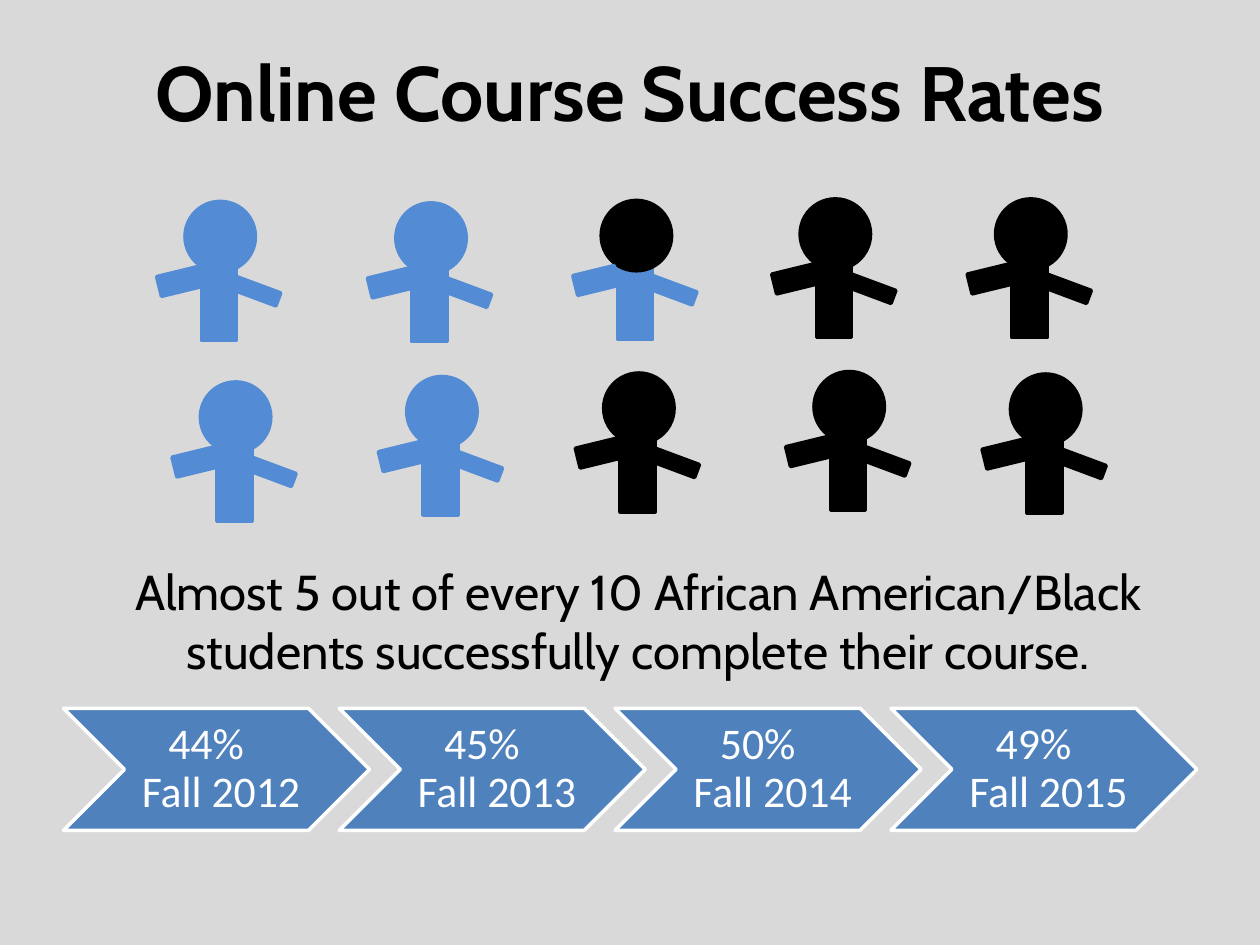
"""Build the slide on online course success rates."""
import pptx
import pptx.dml.color
import pptx.enum.shapes
import pptx.enum.text
import pptx.util

Cm = pptx.util.Cm
Pt = pptx.util.Pt
RGBColor = pptx.dml.color.RGBColor
Shape = pptx.enum.shapes.MSO_SHAPE

BACKGROUND = RGBColor(0xD9, 0xD9, 0xD9)
BLACK = RGBColor(0x00, 0x00, 0x00)
WHITE = RGBColor(0xFF, 0xFF, 0xFF)
PERSON_BLUE = RGBColor(0x53, 0x8C, 0xD5)
CHEVRON_BLUE = RGBColor(0x4F, 0x81, 0xBD)

TITLE = "Online Course Success Rates"
SUMMARY = ("Almost 5 out of every 10 African American/Black "
           "students successfully complete their course.")
RATES = [("44%", "Fall 2012"), ("45%", "Fall 2013"),
         ("50%", "Fall 2014"), ("49%", "Fall 2015")]
RATE_RIGHT_INDENTS = (0.6, 0)
CHEVRON_LEFT, CHEVRON_TOP, CHEVRON_PITCH = 1.28, 14.28, 5.56
CHEVRON_WIDTH, CHEVRON_HEIGHT = 6.17, 2.46

PEOPLE = [
    (3.73, 4.06, PERSON_BLUE, PERSON_BLUE),
    (4.04, 7.70, PERSON_BLUE, PERSON_BLUE),
    (8.20, 7.59, PERSON_BLUE, PERSON_BLUE),
    (7.98, 4.09, PERSON_BLUE, PERSON_BLUE),
    (12.12, 4.04, BLACK, PERSON_BLUE),
    (12.17, 7.52, BLACK, BLACK),
    (16.41, 7.49, BLACK, BLACK),
    (16.13, 4.01, BLACK, BLACK),
    (20.37, 7.54, BLACK, BLACK),
    (20.07, 4.01, BLACK, BLACK),
]


def add_filled_shape(shapes, kind, box, fill, line):
    shape = shapes.add_shape(kind, *map(Cm, box))
    shape.shadow.inherit = False
    shape.fill.solid()
    shape.fill.fore_color.rgb = fill
    shape.line.color.rgb = line
    shape.line.width = Pt(2)
    return shape


def add_text(shapes, box, lines, font_name, size, color, bold=False):
    text_box = shapes.add_textbox(*map(Cm, box))
    frame = text_box.text_frame
    frame.word_wrap = True
    frame.text = "\n".join(lines)
    for paragraph in frame.paragraphs:
        paragraph.alignment = pptx.enum.text.PP_ALIGN.CENTER
        paragraph.font.name = font_name
        paragraph.font.size = Pt(size)
        paragraph.font.bold = bold
        paragraph.font.color.rgb = color
    return frame


def add_heading(shapes, box, text, size, bold=False):
    frame = add_text(shapes, box, [text], "Cabin", size, BLACK, bold)
    frame.auto_size = pptx.enum.text.MSO_AUTO_SIZE.SHAPE_TO_FIT_TEXT


def add_person(slide, left, top, head_color, body_color):
    shapes = slide.shapes.add_group_shape().shapes
    add_filled_shape(shapes, Shape.RECTANGLE, (left + 0.33, top + 1.02, 0.71, 1.78),
                     body_color, body_color)
    add_filled_shape(shapes, Shape.OVAL, (left, top, 1.42, 1.42), head_color, head_color)
    arms = [((left + 0.81, top + 1.22, 1.27, 1.19), 20.4),
            ((left - 0.69, top + 0.74, 1.17, 1.75), 346.3)]
    for box, rotation in arms:
        arm = add_filled_shape(shapes, Shape.MATH_MINUS, box, body_color, body_color)
        arm.adjustments[0] = 0.235
        arm.rotation = rotation


def add_chevron(shapes, left, rate_lines):
    add_filled_shape(shapes, Shape.CHEVRON,
                     (left, CHEVRON_TOP, CHEVRON_WIDTH, CHEVRON_HEIGHT), CHEVRON_BLUE, WHITE)
    frame = add_text(shapes, (left + 1.23, CHEVRON_TOP, 3.71, CHEVRON_HEIGHT),
                     rate_lines, "Calibri", 25, WHITE)
    frame.vertical_anchor = pptx.enum.text.MSO_ANCHOR.MIDDLE
    frame.margin_left = Cm(0.28)
    frame.margin_right = frame.margin_top = frame.margin_bottom = Cm(0.1)
    for paragraph, indent in zip(frame.paragraphs, RATE_RIGHT_INDENTS):
        paragraph.line_spacing = 0.9
        properties = paragraph._p.get_or_add_pPr()
        properties.set("marL", "0")
        properties.set("marR", str(Cm(indent)))
        properties.set("indent", "0")


def main():
    presentation = pptx.Presentation()
    presentation.slide_width = Cm(25.4)
    presentation.slide_height = Cm(19.05)
    slide = presentation.slides.add_slide(presentation.slide_layouts[6])
    slide.background.fill.solid()
    slide.background.fill.fore_color.rgb = BACKGROUND

    add_heading(slide.shapes, (1.27, 0.77, 22.86, 2.13), TITLE, 44, bold=True)
    chevrons = slide.shapes.add_group_shape().shapes
    for index, rate_lines in enumerate(RATES):
        add_chevron(chevrons, CHEVRON_LEFT + index * CHEVRON_PITCH, rate_lines)
    for person in PEOPLE:
        add_person(slide, *person)
    add_heading(slide.shapes, (1.75, 11.2, 22.23, 2.64), SUMMARY, 28)
    presentation.save("out.pptx")


if __name__ == "__main__":
    main()
